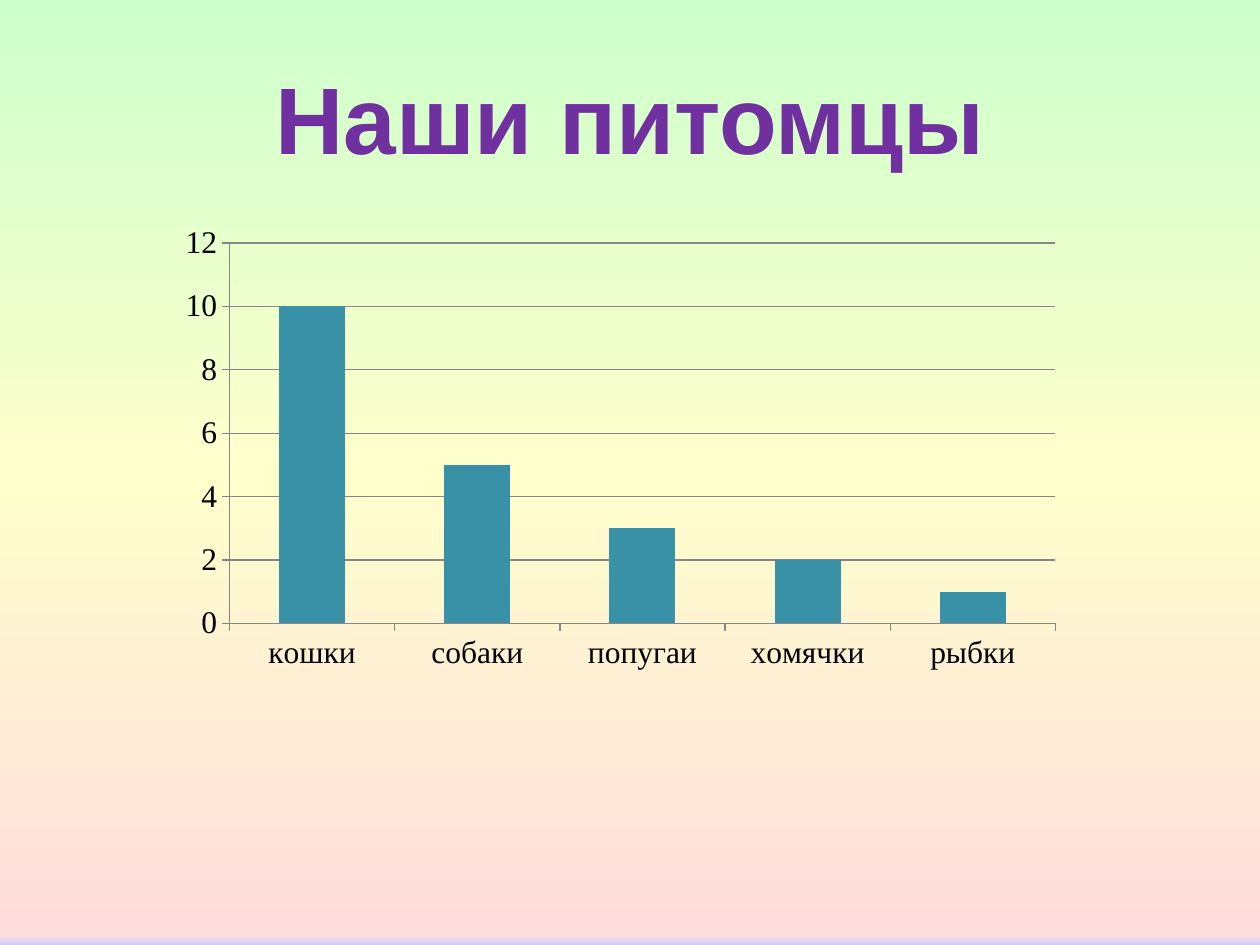
import copy
import pptx
import pptx.chart.data
import pptx.dml.color
import pptx.enum.chart
import pptx.enum.text
import pptx.oxml.ns
import pptx.util

Inches = pptx.util.Inches
Pt = pptx.util.Pt
RGB = pptx.dml.color.RGBColor
TICK = pptx.enum.chart.XL_TICK_MARK

PURPLE = RGB(0x70, 0x30, 0xA0)
TEAL = RGB(0x38, 0x91, 0xA7)
GRAY = RGB(0x87, 0x87, 0x87)
BLACK = RGB(0, 0, 0)
MINT = RGB(0xCC, 0xFF, 0xCC)
CREAM = RGB(0xFF, 0xFF, 0xCC)
PINK = RGB(0xFF, 0xDD, 0xDD)
LILAC = RGB(0xCC, 0xCC, 0xFF)
SKY = [(0, MINT), (0.5, CREAM), (0.99, PINK), (1, LILAC)]
PETS = {"кошки": 10, "собаки": 5, "попугаи": 3, "хомячки": 2, "рыбки": 1}


class Deck:
    head = {"name": "Arial", "size": Pt(54), "bold": True}
    label = {"name": "Times New Roman", "size": Pt(18), "bold": False}

    def __init__(self, wide, high):
        self.file = pptx.Presentation()
        self.file.slide_width = Inches(wide)
        self.file.slide_height = Inches(high)
        self.slide = self.file.slides.add_slide(self.file.slide_layouts[6])

    def style(self, font, look, color):
        for key, value in look.items():
            setattr(font, key, value)
        font.color.rgb = color

    def back(self, stops):
        fill = self.slide.background.fill
        fill.gradient()
        fill.gradient_angle = 270
        tag = pptx.oxml.ns.qn("a:gsLst")
        group = next(self.slide.element.iter(tag))
        for _ in range(len(stops) - len(group)):
            group.append(copy.deepcopy(group[0]))
        for stop, (place, color) in zip(fill.gradient_stops, stops):
            stop.color.rgb = color
            stop.position = place

    def title(self, text, *area):
        box = self.slide.shapes.add_textbox(*map(Inches, area))
        frame = box.text_frame
        frame.word_wrap = True
        frame.vertical_anchor = pptx.enum.text.MSO_ANCHOR.MIDDLE
        para = frame.paragraphs[0]
        para.alignment = pptx.enum.text.PP_ALIGN.CENTER
        run = para.add_run()
        run.text = text
        self.style(run.font, self.head, PURPLE)

    def chart(self, values, *area):
        data = pptx.chart.data.CategoryChartData()
        data.categories = list(values)
        data.add_series("Series 1", list(values.values()))
        kind = pptx.enum.chart.XL_CHART_TYPE.COLUMN_CLUSTERED
        chart = self.slide.shapes.add_chart(
            kind, *map(Inches, area), data).chart
        chart.has_legend = False
        chart.has_title = False
        self.style(chart.font, self.label, BLACK)
        plot = chart.plots[0]
        plot.gap_width = 150
        plot.vary_by_categories = False
        bars = plot.series[0].format.fill
        bars.solid()
        bars.fore_color.rgb = TEAL
        scale = chart.value_axis
        ticks = {"minimum_scale": 0, "maximum_scale": 12, "major_unit": 2,
                 "has_major_gridlines": True}
        for key, value in ticks.items():
            setattr(scale, key, value)
        for axis in (scale, chart.category_axis):
            axis.major_tick_mark = TICK.OUTSIDE
            axis.minor_tick_mark = TICK.NONE
            self.line(axis.format.line)
        self.line(scale.major_gridlines.format.line)

    def line(self, line):
        line.color.rgb = GRAY
        line.width = Pt(0.75)


def main():
    deck = Deck(10, 7.5)
    deck.back(SKY)
    deck.title("Наши питомцы", 0.5, 0.3, 9, 1.25)
    deck.chart(PETS, 1.33, 1.72, 7.19, 3.67)
    deck.file.save("out.pptx")


if __name__ == "__main__":
    main()
